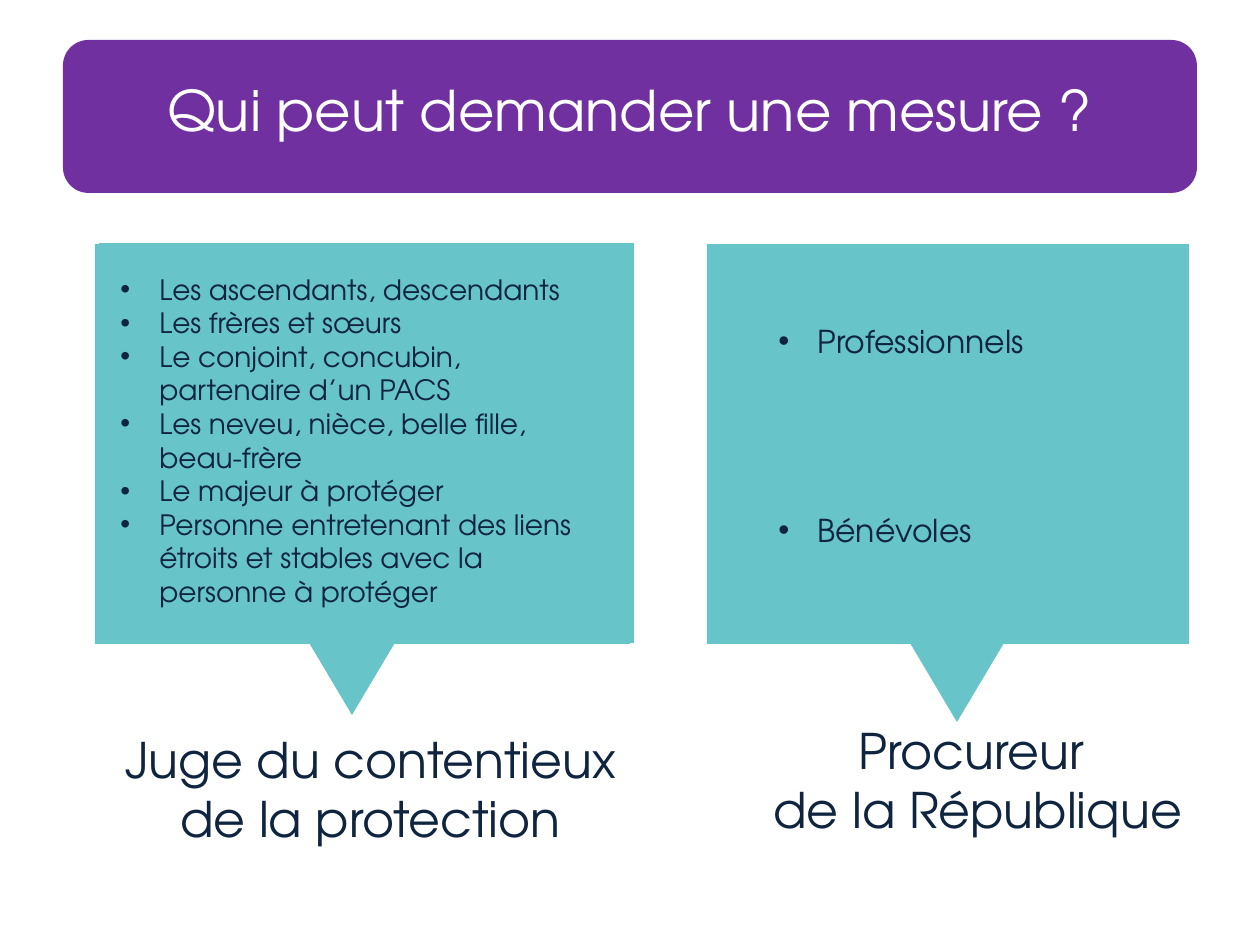
from pptx import Presentation
from pptx.dml.color import RGBColor
from pptx.enum.shapes import MSO_SHAPE as Preset
from pptx.enum.text import MSO_ANCHOR as Anchor, MSO_AUTO_SIZE as AutoSize, PP_ALIGN as Align
from pptx.oxml.ns import qn
from pptx.util import Pt
from lxml.etree import SubElement

SCALE = 914400 / 126  # EMU per px
FONT = "TeX Gyre Adventor"
COLORS = {"panel": "67C4C9", "banner": "7030A0", "ink": "0F243E", "white": "FFFFFF"}

JUDGE_LIST = [
    "Les ascendants, descendants",
    "Les frères et sœurs",
    "Le conjoint, concubin, partenaire d’un PACS",
    "Les neveu, nièce, belle fille, beau-frère",
    "Le majeur à protéger",
    "Personne entretenant des liens étroits et stables avec la personne à protéger",
]
PROSECUTOR_LIST = ["Professionnels", "Bénévoles"]


def px(value):
    return round(value * SCALE)


def apply(target, values):
    for name, value in values.items():
        setattr(target, name, value)


def paint(shape, color):
    shape.shadow.inherit = False
    shape.fill.solid()
    shape.fill.fore_color.rgb = RGBColor.from_string(COLORS[color])
    shape.line.fill.background()


def add_block(slide, preset, box, color):
    paint(slide.shapes.add_shape(preset, *map(px, box)), color)


def add_down_arrow(slide, left, top):
    """Block arrow: shaft inset on both sides, head below the shoulder."""
    width, height, inset, shoulder = 94, 158, 19, 79
    outline = [
        (width - inset, 0), (width - inset, shoulder), (width, shoulder),
        (width / 2, height), (0, shoulder), (inset, shoulder), (inset, 0),
    ]
    points = [(px(left + x), px(top + y)) for x, y in outline]
    builder = slide.shapes.build_freeform(*points[0])
    builder.add_line_segments(points[1:], close=True)
    paint(builder.convert_to_shape(), "panel")


def write(shape, lines, size, color="ink", **paragraph_format):
    frame = shape.text_frame
    apply(frame, {"word_wrap": True, "auto_size": AutoSize.NONE,
                  "vertical_anchor": Anchor.TOP})
    frame.text = "\n".join(lines)
    for paragraph in frame.paragraphs:
        apply(paragraph, paragraph_format)
        apply(paragraph.font, {"name": FONT, "size": Pt(size)})
        for run in paragraph.runs:
            apply(run.font, {"name": FONT, "size": Pt(size)})
            run.font.color.rgb = RGBColor.from_string(COLORS[color])
    return frame


def add_text(slide, box, lines, size, **paragraph_format):
    return write(slide.shapes.add_textbox(*map(px, box)), lines, size, **paragraph_format)


def add_bullets(slide, box, items, size, gap=0):
    frame = add_text(slide, box, items, size)
    for index, paragraph in enumerate(frame.paragraphs):
        if index and gap:
            paragraph.space_before = Pt(gap)
        properties = paragraph._p.get_or_add_pPr()
        properties.set("marL", str(px(39)))
        properties.set("indent", str(-px(39)))
        SubElement(properties, qn("a:buFont")).set("typeface", "Arial")
        SubElement(properties, qn("a:buChar")).set("char", "•")


def set_title(slide, box, text):
    title = slide.shapes.title
    apply(title, dict(zip(("left", "top", "width", "height"), map(px, box))))
    write(title, [text], 32, "white", alignment=Align.CENTER)
    # Bring the title in front of its banner
    title._element.getparent().append(title._element)


def main():
    presentation = Presentation()
    apply(presentation, {"slide_width": px(1260), "slide_height": px(945)})
    slide = presentation.slides.add_slide(presentation.slide_layouts[5])

    # Arrows, partly behind the panels
    add_down_arrow(slide, 305, 557)
    add_down_arrow(slide, 910, 564)

    # Panels; the left one is doubled with a slight offset
    for box in ((99, 243, 535, 400), (707, 244, 482, 400), (95, 244, 535, 400)):
        add_block(slide, Preset.RECTANGLE, box, "panel")

    # Banner and title
    add_block(slide, Preset.ROUNDED_RECTANGLE, (63, 40, 1134, 153), "banner")
    set_title(slide, (63, 69, 1134, 124), "Qui peut demander une mesure ?")

    # Recipients of the request
    add_text(slide, (707, 714, 542, 194), ["Procureur ", "de la République"], 28,
             alignment=Align.CENTER)
    add_text(slide, (108, 723, 525, 54), ["Juge du contentieux de la protection"], 28,
             alignment=Align.CENTER)

    # Who may ask
    add_bullets(slide, (766, 316, 462, 242), PROSECUTOR_LIST, 18, gap=86.4)
    add_bullets(slide, (108, 266, 483, 420), JUDGE_LIST, 16)

    presentation.save("out.pptx")


if __name__ == "__main__":
    main()
